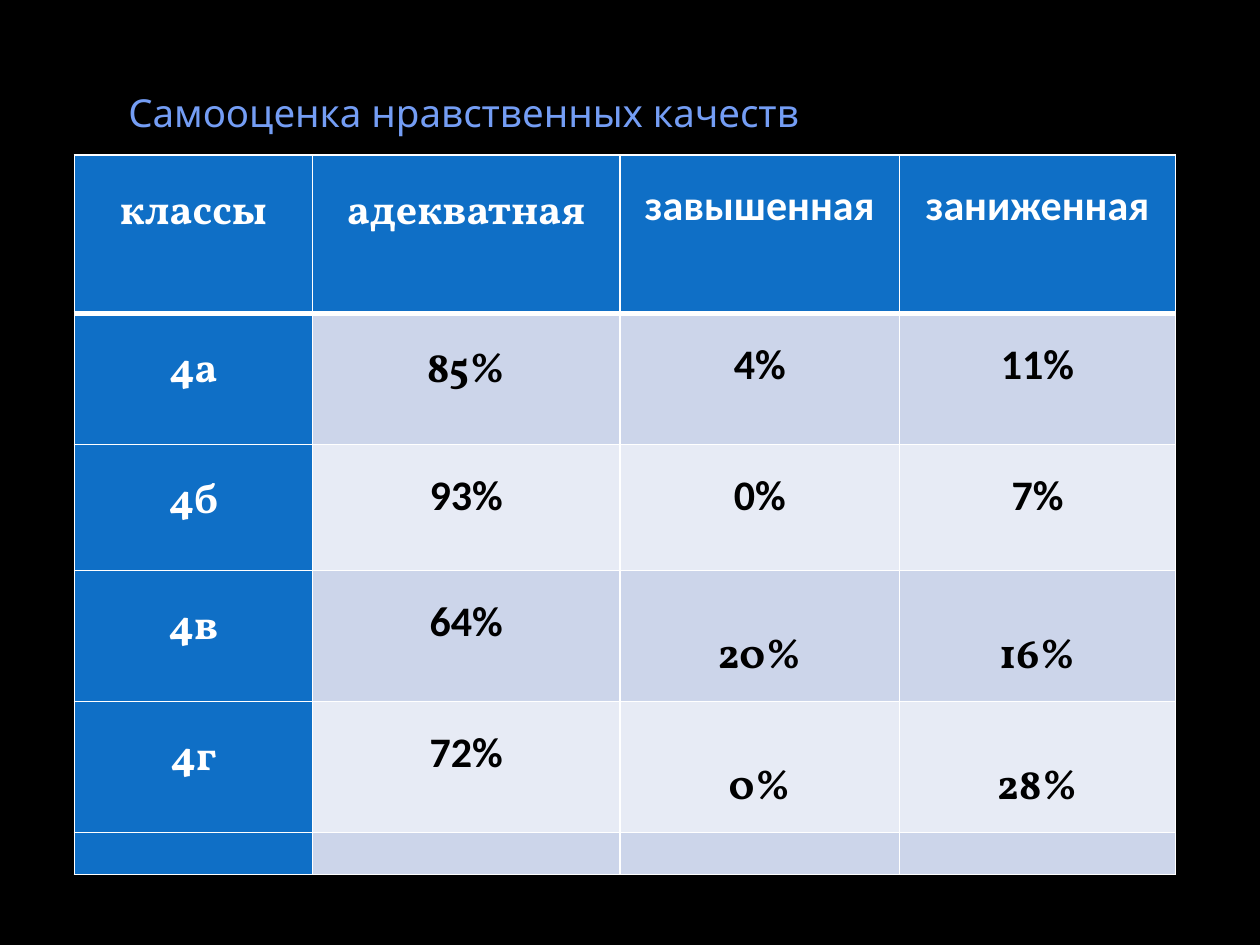
import pptx
import pptx.util
import pptx.dml.color
import pptx.enum.text
import pptx.oxml
import pptx.oxml.ns

Inches = pptx.util.Inches
Pt = pptx.util.Pt
RGBColor = pptx.dml.color.RGBColor
BLACK = RGBColor(0x00, 0x00, 0x00)
WHITE = RGBColor(0xFF, 0xFF, 0xFF)
TITLE_BLUE = RGBColor(0x74, 0x9D, 0xF4)
HEADER_BLUE = RGBColor(0x0F, 0x6F, 0xC6)
BAND_DARK = RGBColor(0xCC, 0xD5, 0xEA)
BAND_LIGHT = RGBColor(0xE7, 0xEB, 0xF5)

ROWS = [
    ["классы", "адекватная", "завышенная", "заниженная"],
    ["4а", "85%", "4%", "11%"],
    ["4б", "93%", "0%", "7%"],
    ["4в", "64%", "20%", "16%"],
    ["4г", "72%", "0%", "28%"],
    ["", "", "", ""],
]
COL_WIDTHS = [1.89, 2.44, 2.22, 2.19]
ROW_HEIGHTS = [1.26, 1.04, 1, 1.04, 1.04, 0.33]
LOWERED = [(3, 2), (3, 3), (4, 2), (4, 3)]
VOLLKORN = [(0, 1), (1, 1)] + LOWERED


def format_font(font, **values):
    color = values.pop("color")
    for name, value in values.items():
        setattr(font, name, value)
    font.color.rgb = color


def add_border(cell, side, width):
    ln = pptx.oxml.parse_xml(
        f'<a:{side} {pptx.oxml.ns.nsdecls("a")} w="{Pt(width)}">'
        f'<a:solidFill><a:srgbClr val="{WHITE}"/></a:solidFill></a:{side}>'
    )
    tcPr = cell._tc.get_or_add_tcPr()
    tcPr.append(ln)


prs = pptx.Presentation()
prs.slide_width = Inches(10)
prs.slide_height = Inches(7.5)
s = prs.slides.add_slide(prs.slide_layouts[6])
s.background.fill.solid()
s.background.fill.fore_color.rgb = BLACK

title = s.shapes.add_textbox(Inches(0.92), Inches(0.44), Inches(7.94), Inches(0.63))
tf = title.text_frame
tf.word_wrap = True
tf.margin_bottom = 0
tf.vertical_anchor = pptx.enum.text.MSO_ANCHOR.BOTTOM
r = tf.paragraphs[0].add_run()
r.text = "Самооценка нравственных качеств"
format_font(r.font, name="Noto Sans", size=Pt(22), color=TITLE_BLUE)

table = s.shapes.add_table(
    len(ROWS), len(COL_WIDTHS), Inches(0.59), Inches(1.23),
    Inches(sum(COL_WIDTHS)), Inches(sum(ROW_HEIGHTS)),
).table
for column, width in zip(table.columns, COL_WIDTHS):
    column.width = Inches(width)
for row, height in zip(table.rows, ROW_HEIGHTS):
    row.height = Inches(height)

for i, texts in enumerate(ROWS):
    for j, text in enumerate(texts):
        cell = table.cell(i, j)
        heading = i == 0 or j == 0
        lowered = (i, j) in LOWERED
        margins = {
            "margin_left": Inches(0.06),
            "margin_right": Inches(0.06),
            "margin_top": Inches(0.46 if lowered else 0),
            "margin_bottom": 0,
        }
        for name, value in margins.items():
            setattr(cell, name, value)
        for side in ("lnL", "lnR", "lnT", "lnB"):
            thick = (i, side) in [(0, "lnB"), (1, "lnT")]
            add_border(cell, side, 3 if thick else 1)
        cell.fill.solid()
        band = BAND_DARK if i % 2 else BAND_LIGHT
        cell.fill.fore_color.rgb = HEADER_BLUE if heading else band
        if not text:
            continue
        p = cell.text_frame.paragraphs[0]
        p.alignment = pptx.enum.text.PP_ALIGN.CENTER
        p.line_spacing = 1.0 if lowered else 1.5
        r = p.add_run()
        r.text = text
        format_font(
            r.font,
            name="Vollkorn" if j == 0 or (i, j) in VOLLKORN else "Calibri",
            size=Pt(24),
            bold=True,
            color=WHITE if heading else BLACK,
        )

prs.save("out.pptx")
